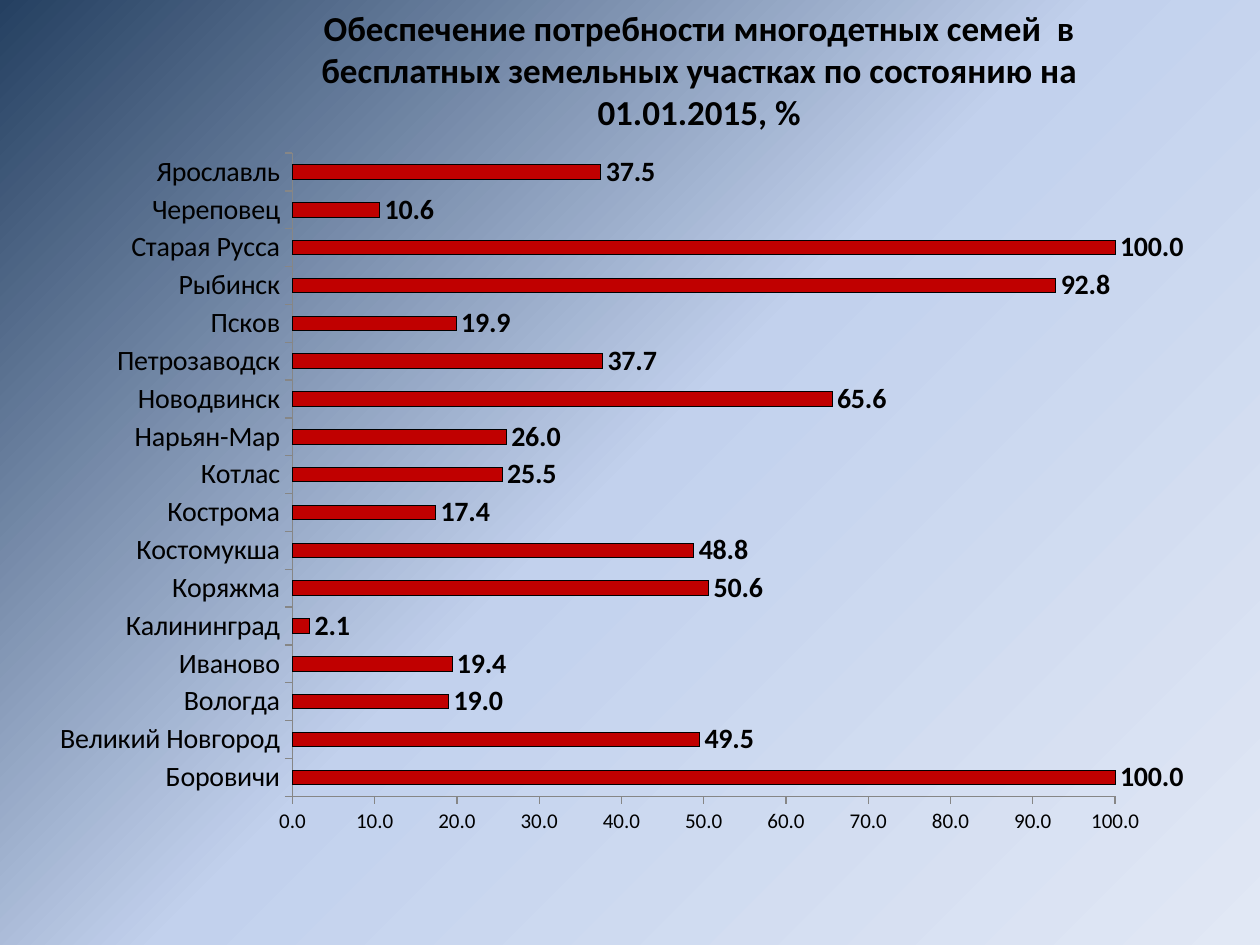
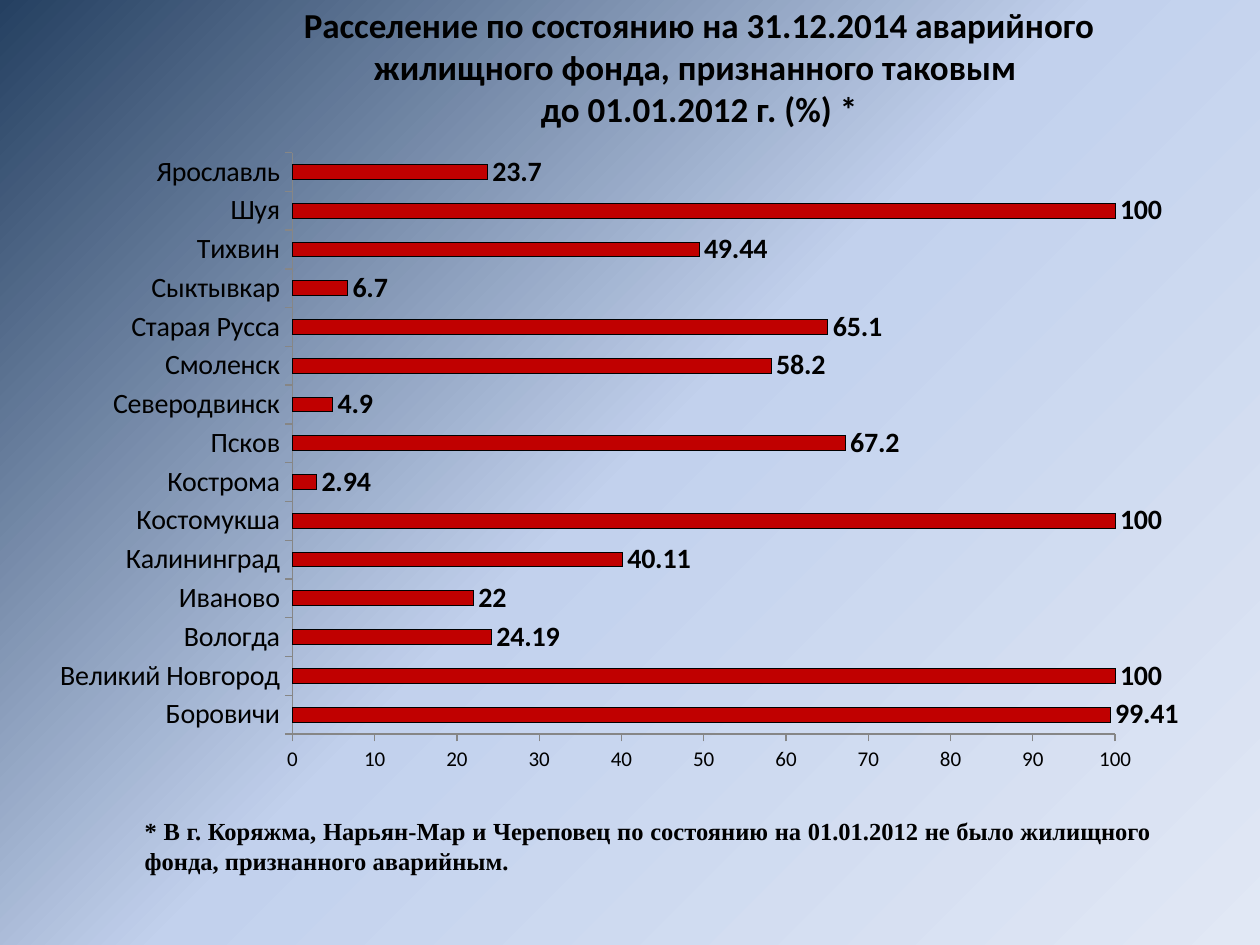
from dataclasses import dataclass

from lxml.etree import SubElement
from pptx import Presentation
from pptx.chart.data import CategoryChartData
from pptx.dml.color import RGBColor
from pptx.enum.chart import XL_CHART_TYPE, XL_LABEL_POSITION, XL_TICK_MARK
from pptx.enum.text import MSO_AUTO_SIZE, PP_ALIGN
from pptx.oxml import parse_xml
from pptx.oxml.ns import nsdecls, qn
from pptx.presentation import Presentation as Deck
from pptx.slide import Slide
from pptx.util import Inches, Pt

BLACK = "000000"
BAR_RED = "C00000"
AXIS_GREY = "868686"
BACKGROUND_STOPS = [(0, "254061"), (50, "C2D1ED"), (100, "E1E8F5")]
PLOT_LAYOUT = {"x": 0.214, "y": 0.008, "w": 0.709, "h": 0.891}
MAIN_FONT = "Calibri"
NOTE_FONT = "Times New Roman"


@dataclass(frozen=True)
class TextBlock:
    paragraphs: list[str]
    left: float
    top: float
    width: float
    height: float
    size: int = 20
    font: str = MAIN_FONT
    align: PP_ALIGN = PP_ALIGN.CENTER


@dataclass(frozen=True)
class CityChart:
    shares: dict[str, float]
    height: float
    number_format: str


@dataclass(frozen=True)
class CitySlide:
    chart: CityChart
    texts: list[TextBlock]


CITY_SLIDES = [
    CitySlide(
        CityChart(
            {
                "Боровичи": 100,
                "Великий Новгород": 49.5,
                "Вологда": 19,
                "Иваново": 19.4,
                "Калининград": 2.1,
                "Коряжма": 50.6,
                "Костомукша": 48.8,
                "Кострома": 17.4,
                "Котлас": 25.5,
                "Нарьян-Мар": 26,
                "Новодвинск": 65.6,
                "Петрозаводск": 37.7,
                "Псков": 19.9,
                "Рыбинск": 92.8,
                "Старая Русса": 100,
                "Череповец": 10.6,
                "Ярославль": 37.5,
            },
            5.73,
            "0.0",
        ),
        [
            TextBlock(
                [
                    "Обеспечение потребности многодетных семей  в бесплатных "
                    "земельных участках по состоянию на 01.01.2015, %"
                ],
                1.85, 0, 7.4, 1.11,
            )
        ],
    ),
    CitySlide(
        CityChart(
            {
                "Боровичи": 99.41,
                "Великий Новгород": 100,
                "Вологда": 24.19,
                "Иваново": 22,
                "Калининград": 40.11,
                "Костомукша": 100,
                "Кострома": 2.94,
                "Псков": 67.2,
                "Северодвинск": 4.9,
                "Смоленск": 58.2,
                "Старая Русса": 65.1,
                "Сыктывкар": 6.7,
                "Тихвин": 49.44,
                "Шуя": 100,
                "Ярославль": 23.7,
            },
            5.18,
            "General",
        ),
        [
            TextBlock(
                [
                    "Расселение по состоянию на 31.12.2014 аварийного "
                    "жилищного фонда, признанного таковым ",
                    "до 01.01.2012 г. (%) *",
                ],
                1.85, -0.02, 7.4, 1.11,
            ),
            TextBlock(
                [
                    "* В г. Коряжма, Нарьян-Мар и Череповец по состоянию на "
                    "01.01.2012 не было жилищного фонда, признанного аварийным."
                ],
                1.05, 6.43, 8.19, 0.57, 14, NOTE_FONT, PP_ALIGN.JUSTIFY,
            ),
        ],
    ),
]


def rgb(color: str) -> RGBColor:
    return RGBColor.from_string(color)


def paint_background(slide: Slide) -> None:
    fill = slide.background.fill
    fill.gradient()
    fill.gradient_angle = 315
    stops = next(slide.element.iter(qn("a:gsLst")))
    for stop in list(stops):
        stops.remove(stop)
    for percent, color in BACKGROUND_STOPS:
        stop = SubElement(stops, qn("a:gs"), pos=str(percent * 1000))
        SubElement(stop, qn("a:srgbClr"), val=color)


def fix_plot_layout(plot_area) -> None:
    for layout in plot_area.findall(qn("c:layout")):
        plot_area.remove(layout)
    modes = '<c:xMode val="edge"/><c:yMode val="edge"/>'
    sizes = "".join(f'<c:{key} val="{share}"/>' for key, share in PLOT_LAYOUT.items())
    plot_area.insert(0, parse_xml(
        f'<c:layout {nsdecls("c")}><c:manualLayout><c:layoutTarget val="inner"/>'
        f"{modes}{sizes}</c:manualLayout></c:layout>"
    ))


def add_city_chart(slide: Slide, city_chart: CityChart) -> None:
    data = CategoryChartData()
    data.categories = list(city_chart.shares)
    data.add_series("Series 1", list(city_chart.shares.values()))
    chart = slide.shapes.add_chart(
        XL_CHART_TYPE.BAR_CLUSTERED, Inches(0.35), Inches(1.17),
        Inches(9.21), Inches(city_chart.height), data,
    ).chart
    chart.has_legend = False
    chart.has_title = False
    chart.font.name = MAIN_FONT
    chart.font.size = Pt(16)
    chart.font.color.rgb = rgb(BLACK)
    fix_plot_layout(next(chart.element.iter(qn("c:plotArea"))))

    for axis in (chart.category_axis, chart.value_axis):
        axis.has_major_gridlines = False
        axis.major_tick_mark = XL_TICK_MARK.OUTSIDE
        axis.minor_tick_mark = XL_TICK_MARK.NONE
        axis.format.line.color.rgb = rgb(AXIS_GREY)
    scale = chart.value_axis
    scale.minimum_scale = 0
    scale.maximum_scale = 100
    scale.major_unit = 10
    scale.tick_labels.font.size = Pt(12)
    scale.tick_labels.number_format = city_chart.number_format
    scale.tick_labels.number_format_is_linked = False

    plot = chart.plots[0]
    plot.vary_by_categories = False
    plot.gap_width = 162
    plot.overlap = -68
    bars = plot.series[0]
    bars.invert_if_negative = False
    bars.format.fill.solid()
    bars.format.fill.fore_color.rgb = rgb(BAR_RED)
    bars.format.line.color.rgb = rgb(BLACK)
    bars.format.line.width = Pt(0)

    labels = bars.data_labels
    labels.show_value = True
    labels.position = XL_LABEL_POSITION.OUTSIDE_END
    labels.number_format = city_chart.number_format
    labels.number_format_is_linked = False
    labels.font.name = MAIN_FONT
    labels.font.size = Pt(16)
    labels.font.bold = True
    labels.font.color.rgb = rgb(BLACK)


def add_text(slide: Slide, block: TextBlock) -> None:
    frame = slide.shapes.add_textbox(
        Inches(block.left), Inches(block.top), Inches(block.width), Inches(block.height)
    ).text_frame
    frame.word_wrap = True
    frame.auto_size = MSO_AUTO_SIZE.SHAPE_TO_FIT_TEXT
    frame.text = "\n".join(block.paragraphs)
    for paragraph in frame.paragraphs:
        paragraph.alignment = block.align
        paragraph.font.name = block.font
        paragraph.font.size = Pt(block.size)
        paragraph.font.bold = True
        paragraph.font.color.rgb = rgb(BLACK)


def add_city_slide(deck: Deck, content: CitySlide) -> None:
    slide = deck.slides.add_slide(deck.slide_layouts[6])
    paint_background(slide)
    add_city_chart(slide, content.chart)
    for block in content.texts:
        add_text(slide, block)


def main() -> None:
    deck = Presentation()
    deck.slide_width = Inches(10)
    deck.slide_height = Inches(7.5)
    for content in CITY_SLIDES:
        add_city_slide(deck, content)
    deck.save("out.pptx")


if __name__ == "__main__":
    main()
